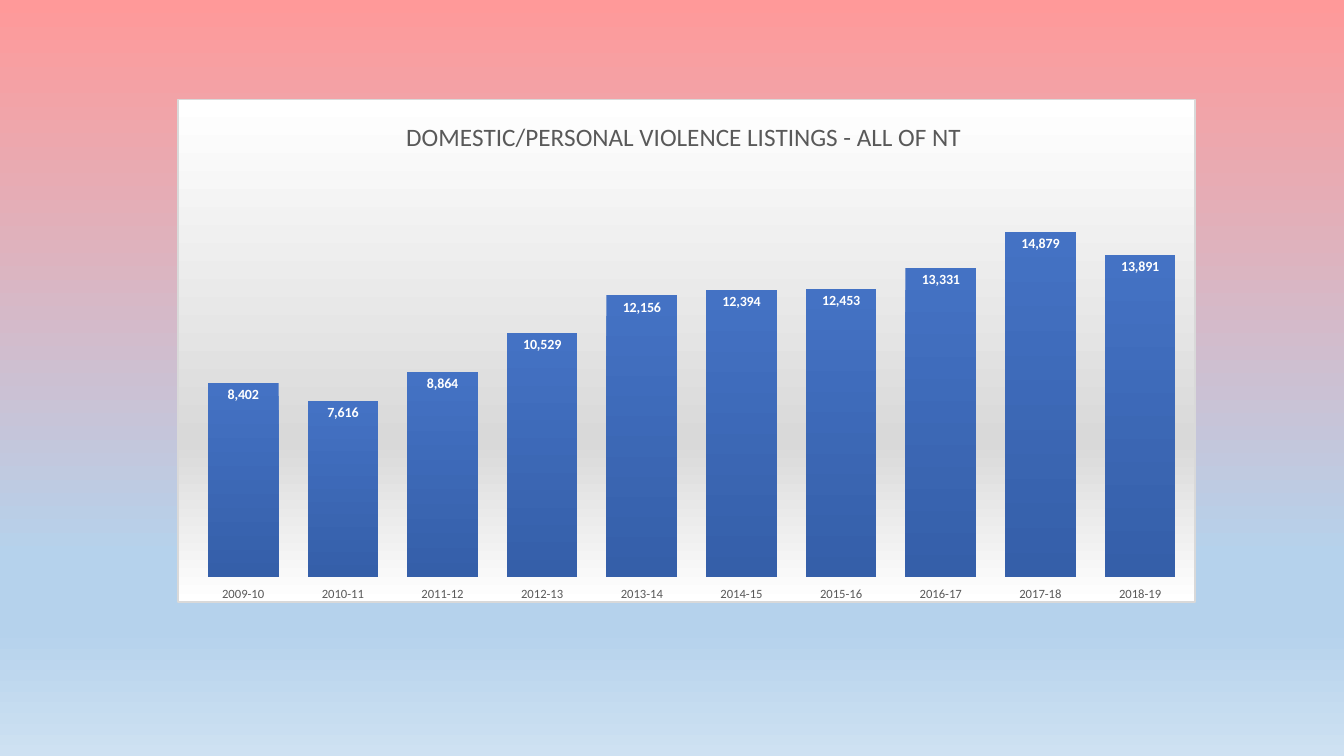
from pptx import Presentation
from pptx.chart.data import CategoryChartData
from pptx.dml.color import RGBColor
from pptx.enum.chart import (XL_CHART_TYPE, XL_LABEL_POSITION, XL_TICK_LABEL_POSITION,
                             XL_TICK_MARK)
from pptx.oxml import parse_xml
from pptx.oxml.ns import nsdecls, qn
from pptx.util import Inches, Pt

FONT = "Calibri"
BLACK = RGBColor(0x00, 0x00, 0x00)
WHITE = RGBColor(0xFF, 0xFF, 0xFF)
GRAY = RGBColor(0x59, 0x59, 0x59)
SILVER = RGBColor(0xD9, 0xD9, 0xD9)
CORAL = RGBColor(0xFF, 0x99, 0x99)
SKY = RGBColor(0xB5, 0xD2, 0xEC)
PALE_SKY = RGBColor(0xCE, 0xE1, 0xF2)
BLUE = RGBColor(0x44, 0x72, 0xC4)
DARK_BLUE = RGBColor(0x35, 0x5F, 0xA9)

# Gradients run from top to bottom: (percent, colour)
BACKGROUND_STOPS = [(0, CORAL), (74, SKY), (83, SKY), (100, PALE_SKY)]
CHART_STOPS = [(0, WHITE), (68, SILVER), (100, WHITE)]
BAR_STOPS = [(0, BLUE), (100, DARK_BLUE)]

TITLE = "DOMESTIC/PERSONAL VIOLENCE LISTINGS - ALL OF NT "
LISTINGS = {
    "2009-10": 8402, "2010-11": 7616, "2011-12": 8864, "2012-13": 10529,
    "2013-14": 12156, "2014-15": 12394, "2015-16": 12453, "2016-17": 13331,
    "2017-18": 14879, "2018-19": 13891,
}
MAJOR_UNIT = 3750
PLOT_SHARES = {"x": 0.015, "y": 0.086, "w": 0.98, "h": 0.865}


def set_font(font, size, color, bold=False):
    font.name = FONT
    font.size = Pt(size)
    font.bold = bold
    font.color.rgb = color


def vertical_gradient(stops):
    stop_xml = "".join(
        f'<a:gs pos="{percent * 1000}"><a:srgbClr val="{color}"/></a:gs>'
        for percent, color in stops)
    return parse_xml(
        f'<a:gradFill {nsdecls("a")} rotWithShape="1"><a:gsLst>{stop_xml}</a:gsLst>'
        '<a:lin ang="5400000" scaled="0"/></a:gradFill>')


def apply_gradient(fill, element, stops):
    """Swap the solid fill inside the element for a gradient."""
    fill.solid()
    solid = next(element.iter(qn("a:solidFill")))
    solid.getparent().replace(solid, vertical_gradient(stops))


def style_chart_area(chart):
    """Gradient backdrop, thin border and fixed plot area."""
    area = parse_xml(
        f'<c:spPr {nsdecls("c", "a")}><a:ln w="{Pt(1)}"><a:solidFill>'
        f'<a:srgbClr val="{SILVER}"/></a:solidFill></a:ln></c:spPr>')
    area.insert(0, vertical_gradient(CHART_STOPS))
    chart_element = chart._chartSpace.find(qn("c:chart"))
    chart_element.addnext(area)

    plot_area = chart_element.find(qn("c:plotArea"))
    for layout in plot_area.findall(qn("c:layout")):
        plot_area.remove(layout)
    modes = '<c:xMode val="edge"/><c:yMode val="edge"/>'
    shares = "".join(f'<c:{key} val="{share}"/>' for key, share in PLOT_SHARES.items())
    plot_area.insert(0, parse_xml(
        f'<c:layout {nsdecls("c")}><c:manualLayout><c:layoutTarget val="inner"/>'
        f'{modes}{shares}</c:manualLayout></c:layout>'))


def style_title(chart):
    chart.has_title = True
    text_frame = chart.chart_title.text_frame
    text_frame.text = TITLE
    set_font(text_frame.paragraphs[0].font, 18, GRAY)
    chart._chartSpace.find(".//" + qn("c:title")).find(qn("c:overlay")).set("val", "1")


def style_axes(chart):
    for axis in (chart.category_axis, chart.value_axis):
        axis.has_major_gridlines = False
        axis.major_tick_mark = XL_TICK_MARK.NONE
        axis.minor_tick_mark = XL_TICK_MARK.NONE
        axis.format.line.fill.background()
    chart.category_axis.tick_label_position = XL_TICK_LABEL_POSITION.LOW
    set_font(chart.category_axis.tick_labels.font, 9, GRAY)
    chart.value_axis.tick_label_position = XL_TICK_LABEL_POSITION.NONE
    chart.value_axis.minimum_scale = 0
    chart.value_axis.maximum_scale = 5 * MAJOR_UNIT
    chart.value_axis.major_unit = MAJOR_UNIT


def style_bars(plot):
    plot.gap_width = 41
    plot.vary_by_categories = False
    series = plot.series[0]
    apply_gradient(series.format.fill, series._element, BAR_STOPS)
    labels = series.data_labels
    labels.show_value = True
    labels.position = XL_LABEL_POSITION.INSIDE_END
    labels.number_format = "#,##0"
    labels.number_format_is_linked = False
    set_font(labels.font, 10, WHITE, bold=True)


def add_listings_chart(slide, left, top, width, height):
    data = CategoryChartData(number_format="#,##0")
    data.categories = list(LISTINGS)
    data.add_series("Series 1", list(LISTINGS.values()))
    chart = slide.shapes.add_chart(
        XL_CHART_TYPE.COLUMN_CLUSTERED, left, top, width, height, data).chart
    chart.has_legend = False
    set_font(chart.font, 10, BLACK)
    style_chart_area(chart)
    style_title(chart)
    style_axes(chart)
    style_bars(chart.plots[0])


def main():
    presentation = Presentation()
    presentation.slide_width = Inches(13.33)
    presentation.slide_height = Inches(7.5)
    slide = presentation.slides.add_slide(presentation.slide_layouts[6])
    apply_gradient(slide.background.fill, slide._element, BACKGROUND_STOPS)
    add_listings_chart(slide, Inches(1.76), Inches(0.98), Inches(10.1), Inches(5))
    presentation.save("out.pptx")


if __name__ == "__main__":
    main()
